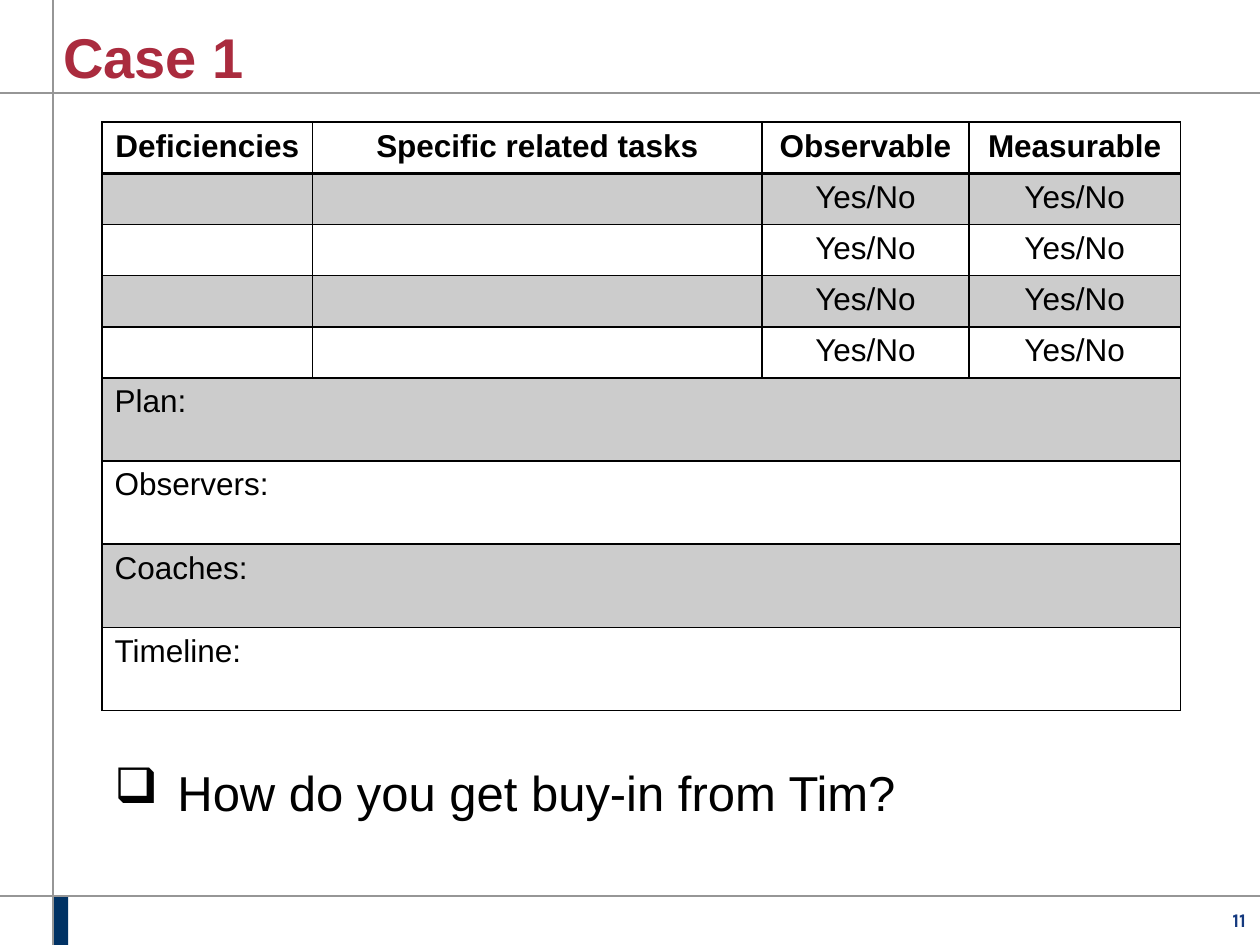
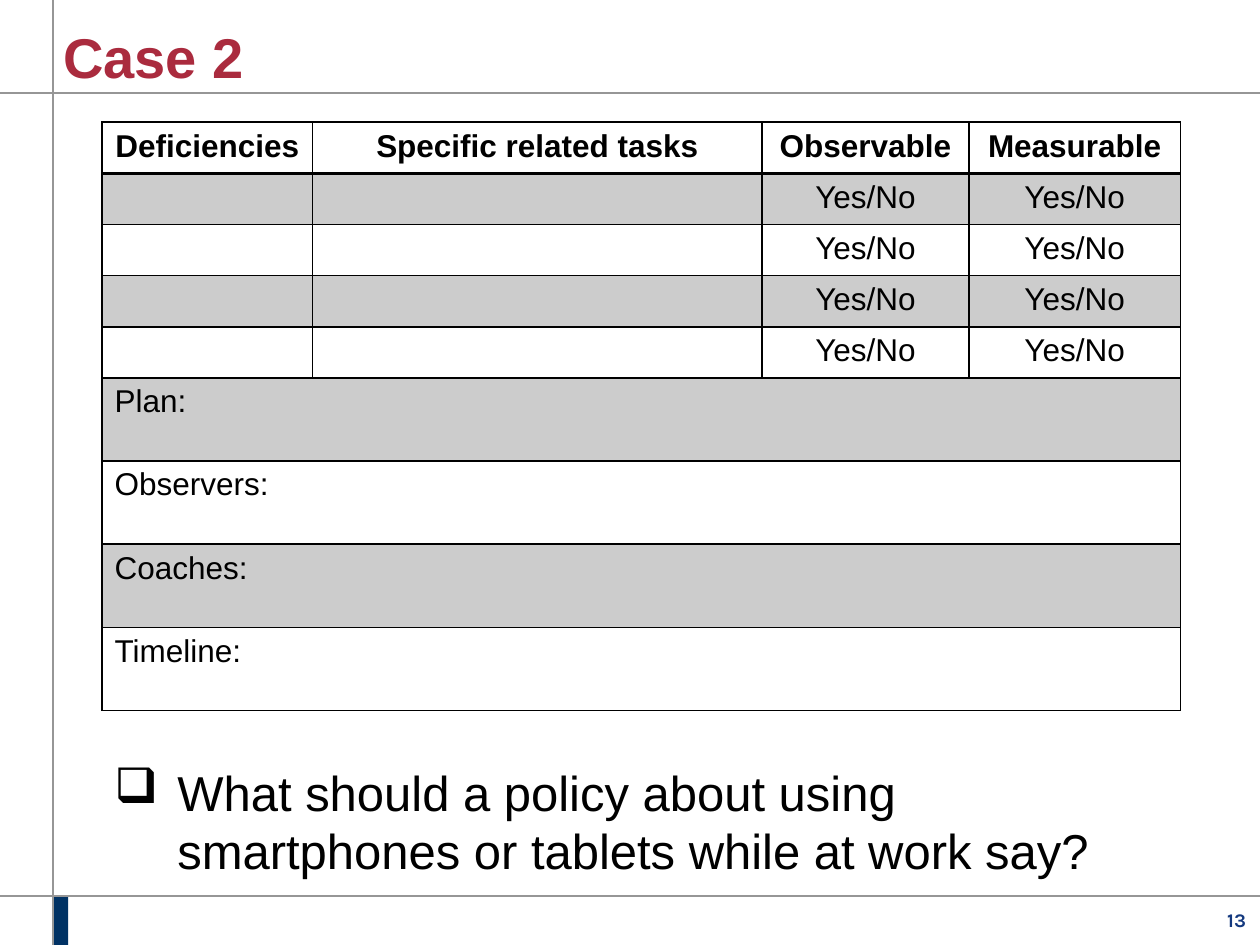
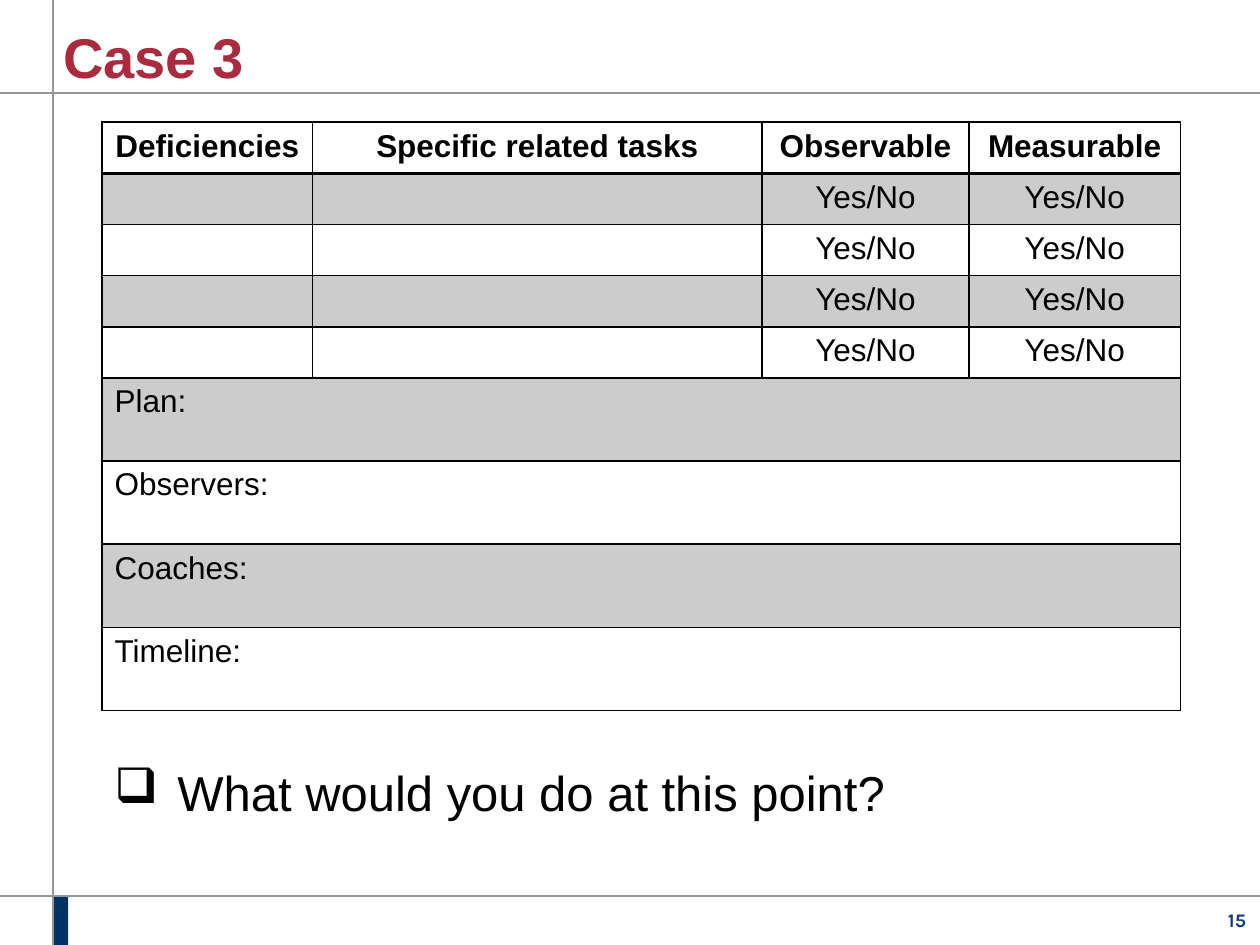
import pptx
import pptx.util
import pptx.dml.color
import pptx.enum.shapes
import pptx.enum.text
import pptx.oxml
import pptx.oxml.ns
from lxml import etree

Inches = pptx.util.Inches
Pt = pptx.util.Pt
ALIGN = pptx.enum.text.PP_ALIGN
ANCHOR = pptx.enum.text.MSO_ANCHOR
FIT = pptx.enum.text.MSO_AUTO_SIZE
qn = pptx.oxml.ns.qn

HUES = {
    "title": "AA2B3E",
    "rule": "969696",
    "tab": "003264",
    "page": "14397F",
    "ink": "000000",
    "band": "CCCCCC",
    "plain": "FFFFFF",
}
FACE = "Arial"
HEADS = ["Deficiencies", "Specific related tasks", "Observable", "Measurable"]
WIDTHS = [1.67, 3.57, 1.64, 1.68]
TASKS = 4
NOTES = ["Plan:", "Observers:", "Coaches:", "Timeline:"]
TASK_H = 2.03 / (TASKS + 1)
NOTE_H = 0.66
RULES = [(0, 7.11, 10, 7.11), (0.42, 7.5, 0.42, 0), (0, 0.74, 10, 0.74)]
CASES = [
    ("Case 1", 11, "How do you get buy-in from Tim?", 0.57),
    ("Case 2", 13, "What should a policy about using smartphones or tablets while at work say?", 1.04),
    ("Case 3", 15, "What would you do at this point?", 0.57),
]


def color(name):
    return pptx.dml.color.RGBColor.from_string(HUES[name])


def style(para, size, hue="ink", bold=False, face=FACE):
    for run in para.runs:
        run.font.size = Pt(size)
        run.font.name = face
        run.font.bold = bold
        run.font.color.rgb = color(hue)


def add_box(slide, spot, text, wrap=True, inset=True):
    box = slide.shapes.add_textbox(*map(Inches, spot))
    frame = box.text_frame
    frame.word_wrap = wrap
    if not inset:
        frame.margin_left = frame.margin_right = 0
        frame.margin_top = frame.margin_bottom = 0
        frame.vertical_anchor = ANCHOR.BOTTOM
    frame.text = text
    return frame


def add_rule(slide, ends):
    kind = pptx.enum.shapes.MSO_CONNECTOR.STRAIGHT
    rule = slide.shapes.add_connector(kind, *map(Inches, ends))
    rule.line.color.rgb = color("rule")
    rule.line.width = Pt(1)
    etree.SubElement(rule._element.spPr, qn("a:effectLst"))


def add_base(slide, page):
    frame = add_box(slide, (9.73, 7.21, 0.16, 0.18), str(page), wrap=False, inset=False)
    frame.auto_size = FIT.SHAPE_TO_FIT_TEXT
    para = frame.paragraphs[0]
    para.alignment = ALIGN.RIGHT
    style(para, 11, "page", True, "Karla")
    kind = pptx.enum.shapes.MSO_SHAPE.RECTANGLE
    tab = slide.shapes.add_shape(kind, *map(Inches, (0.42, 7.11, 0.12, 0.39)))
    tab.shadow.inherit = False
    tab.fill.solid()
    tab.fill.fore_color.rgb = color("tab")
    tab.line.fill.background()
    for ends in RULES:
        add_rule(slide, ends)


def add_title(slide, text):
    frame = add_box(slide, (0.5, 0.1, 9.32, 0.61), text, inset=False)
    style(frame.paragraphs[0], 32, "title", True)


def set_edges(cell, row):
    props = cell._tc.get_or_add_tcPr()
    sizes = {"L": 1, "R": 1, "T": 2 if row == 1 else 1, "B": 2 if row == 0 else 1}
    for side, size in sizes.items():
        edge = etree.SubElement(props, qn("a:ln" + side), w=str(Pt(size)))
        fill = etree.SubElement(edge, qn("a:solidFill"))
        etree.SubElement(fill, qn("a:srgbClr"), val=HUES["ink"])


def add_grid(slide):
    rows = [HEADS] + [["", "", "Yes/No", "Yes/No"]] * TASKS
    rows += [[note, "", "", ""] for note in NOTES]
    heights = [TASK_H] * (TASKS + 1) + [NOTE_H] * len(NOTES)
    spot = (0.81, 0.97, sum(WIDTHS), sum(heights))
    grid = slide.shapes.add_table(len(rows), len(HEADS), *map(Inches, spot)).table
    grid.first_row = False
    grid.horz_banding = False
    for col, width in enumerate(WIDTHS):
        grid.columns[col].width = Inches(width)
    for row, texts in enumerate(rows):
        grid.rows[row].height = Inches(heights[row])
        for col, text in enumerate(texts):
            cell = grid.cell(row, col)
            set_edges(cell, row)
            cell.fill.solid()
            cell.fill.fore_color.rgb = color("band" if row % 2 else "plain")
            cell.text_frame.text = text
            para = cell.text_frame.paragraphs[0]
            if row <= TASKS:
                para.alignment = ALIGN.CENTER
            style(para, 18, bold=row == 0)
        if row > TASKS:
            grid.cell(row, 0).merge(grid.cell(row, len(HEADS) - 1))


def add_query(slide, text, height):
    frame = add_box(slide, (0.81, 6, 8.35, height), text)
    frame.auto_size = FIT.SHAPE_TO_FIT_TEXT
    para = frame.paragraphs[0]
    props = para._p.get_or_add_pPr()
    props.set("marL", str(Inches(0.5)))
    props.set("indent", str(Inches(-0.5)))
    etree.SubElement(props, qn("a:buChar"), char="❑")
    style(para, 28)


def main():
    deck = pptx.Presentation()
    deck.slide_width = Inches(10)
    deck.slide_height = Inches(7.5)
    for title, page, query, height in CASES:
        slide = deck.slides.add_slide(deck.slide_layouts[6])
        add_base(slide, page)
        add_title(slide, title)
        add_grid(slide)
        add_query(slide, query, height)
    deck.save("out.pptx")


if __name__ == "__main__":
    main()
